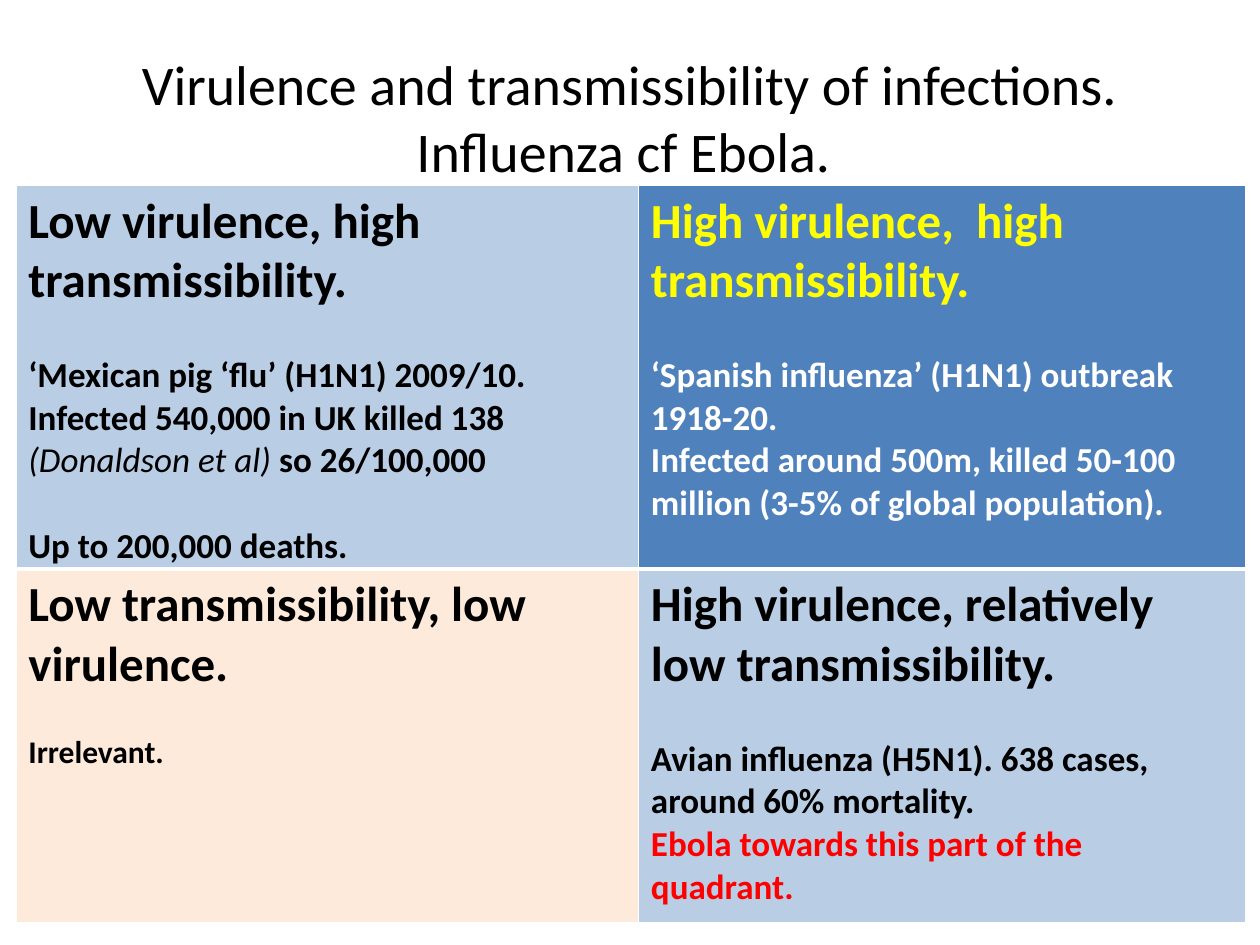
from dataclasses import dataclass

from lxml.etree import SubElement as Sub
from pptx import Presentation as Deck
from pptx.dml.color import RGBColor as Rgb
from pptx.enum.text import MSO_ANCHOR as Anchor, PP_ALIGN as Align
from pptx.oxml.ns import qn
from pptx.util import Pt

HUES = {
    "black": "000000", "white": "FFFFFF", "yellow": "FFFF00", "red": "FF0000",
    "pale": "B9CDE5", "blue": "4F81BD", "peach": "FDEADA",
}
LINE = 1.22  # line height of Calibri per point of size


@dataclass
class Run:
    text: str
    hue: str = "black"
    bold: bool = True
    slant: bool = False


@dataclass
class Para:
    runs: list[Run]
    gap: bool = False  # one line of space above


@dataclass
class Box:
    head: str
    tint: str
    hue: str
    size: int
    body: list[Para]


GRID = [
    [
        Box("Low virulence, high transmissibility.", "pale", "black", 20, [
            Para([Run("‘Mexican pig ‘flu’ (H1N1) 2009/10.")], True),
            Para([Run("Infected 540,000 in UK killed 138 "),
                  Run("(Donaldson et al) ", bold=False, slant=True),
                  Run("so 26/100,000")]),
            Para([Run("Up to 200,000 deaths.")], True),
        ]),
        Box("High virulence,  high transmissibility.", "blue", "yellow", 20, [
            Para([Run("‘Spanish influenza’ (H1N1) outbreak 1918-20.", "white")], True),
            Para([Run("Infected around 500m, killed 50-100 million "
                      "(3-5% of global population).", "white")]),
        ]),
    ],
    [
        Box("Low transmissibility, low virulence.", "peach", "black", 18, [
            Para([Run("Irrelevant.")], True),
        ]),
        Box("High virulence, relatively low transmissibility.", "pale", "black", 20, [
            Para([Run("Avian influenza (H5N1). 638 cases, around 60% mortality.")], True),
            Para([Run("Ebola towards this part of the quadrant.", "red")]),
        ]),
    ],
]


def add_run(para, run: Run, size: int) -> None:
    part = para.add_run()
    part.text = run.text
    form = {"name": "Calibri", "size": Pt(size), "bold": run.bold, "italic": run.slant}
    for key, val in form.items():
        setattr(part.font, key, val)
    part.font.color.rgb = Rgb.from_string(HUES[run.hue])


def add_edges(cell, base: float) -> None:
    """Draw white borders, with the bottom one base points wide."""
    props = cell._tc.get_or_add_tcPr()
    for side, width in {"L": 1, "R": 1, "T": 1, "B": base}.items():
        edge = Sub(props, qn(f"a:ln{side}"), w=str(Pt(width)))
        fill = Sub(edge, qn("a:solidFill"))
        Sub(fill, qn("a:srgbClr"), val=HUES["white"])


def fill_cell(cell, box: Box, base: float) -> None:
    add_edges(cell, base)
    cell.fill.solid()
    cell.fill.fore_color.rgb = Rgb.from_string(HUES[box.tint])
    frame = cell.text_frame
    add_run(frame.paragraphs[0], Run(box.head, box.hue), 28)
    for item in box.body:
        para = frame.add_paragraph()
        if item.gap:
            para.space_before = Pt(round(box.size * LINE, 1))
        for run in item.runs:
            add_run(para, run, box.size)


def add_title(slide) -> None:
    frame = slide.shapes.add_textbox(Pt(36), Pt(21.6), Pt(648), Pt(90)).text_frame
    for key, val in {"word_wrap": True, "vertical_anchor": Anchor.MIDDLE}.items():
        setattr(frame, key, val)
    para = frame.paragraphs[0]
    para.alignment = Align.CENTER
    title = "Virulence and transmissibility of infections. Influenza cf Ebola. "
    add_run(para, Run(title, bold=False), 32)


def add_grid(slide) -> None:
    wide, high = (355.8, 346.8), (215.4, 202.2)
    table = slide.shapes.add_table(
        2, 2, Pt(9), Pt(105.8), Pt(sum(wide)), Pt(sum(high))).table
    for key in ("first_row", "horz_banding"):
        setattr(table, key, False)
    for col, width in zip(table.columns, wide):
        col.width = Pt(width)
    for row, height, boxes, base in zip(table.rows, high, GRID, (3, 1)):
        row.height = Pt(height)
        for cell, box in zip(row.cells, boxes):
            fill_cell(cell, box, base)


def main() -> None:
    deck = Deck()
    deck.slide_width, deck.slide_height = Pt(720), Pt(540)
    slide = deck.slides.add_slide(deck.slide_layouts[6])
    add_title(slide)
    add_grid(slide)
    deck.save("out.pptx")


if __name__ == "__main__":
    main()
